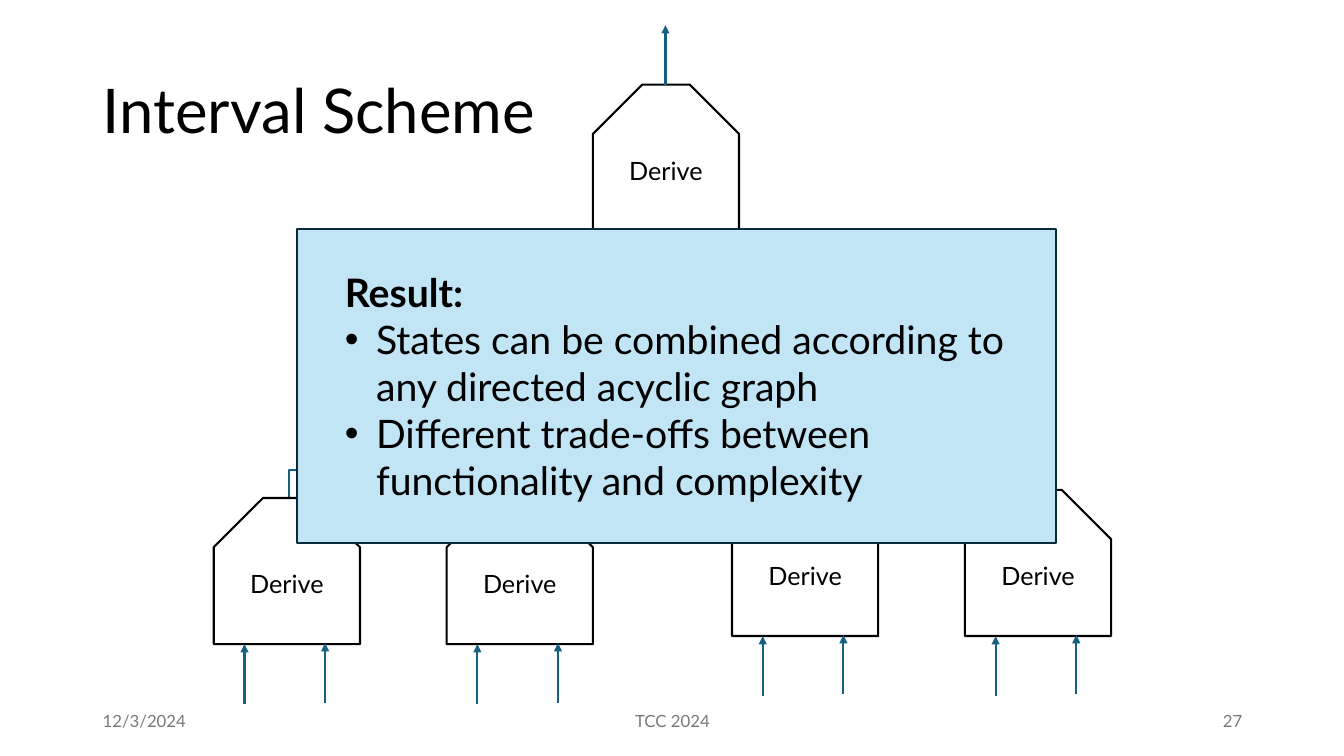
import pptx
import pptx.util
import pptx.dml.color
import pptx.enum.shapes
import pptx.enum.text
import pptx.oxml
import pptx.oxml.ns
import lxml.etree

Inches = pptx.util.Inches
Pt = pptx.util.Pt
qn = pptx.oxml.ns.qn
SHAPES = pptx.enum.shapes.MSO_SHAPE
CONNECTORS = pptx.enum.shapes.MSO_CONNECTOR
ALIGN = pptx.enum.text.PP_ALIGN

COLORS = {"ink": "000000", "paper": "FFFFFF", "arrow": "156082",
          "footer": "797979", "panel": "C1E5F5", "panel_line": "092A39"}


def rgb(name):
    return pptx.dml.color.RGBColor.from_string(COLORS[name])


def write(para, text, size=18, color="ink", bold=False, align=ALIGN.LEFT,
          spacing=None, bullet_indent=None):
    para.alignment = align
    para.line_spacing = spacing
    span = para.add_run()
    span.text = text
    span.font.name = "Lato"
    span.font.size = Pt(size)
    span.font.bold = bold
    span.font.color.rgb = rgb(color)
    if bullet_indent:
        props = para._p.get_or_add_pPr()
        props.set("marL", str(Inches(bullet_indent)))
        props.set("indent", str(-Inches(bullet_indent)))
        lxml.etree.SubElement(props, qn("a:buFont")).set("typeface", "Arial")
        lxml.etree.SubElement(props, qn("a:buChar")).set("char", "•")


class SlideBuilder:
    font_anchor = pptx.enum.text.MSO_ANCHOR.MIDDLE
    line_width = 1.5

    def __init__(self, page):
        self.page = page

    def label(self, left, top, width, height, text, **style):
        box = self.page.shapes.add_textbox(*map(Inches, (left, top, width, height)))
        box.text_frame.word_wrap = True
        box.text_frame.vertical_anchor = self.font_anchor
        write(box.text_frame.paragraphs[0], text, **style)

    def block(self, kind, left, top, width, height, fill, line):
        shape = self.page.shapes.add_shape(kind, *map(Inches, (left, top, width, height)))
        shape.shadow.inherit = False
        shape.fill.solid()
        shape.fill.fore_color.rgb = rgb(fill)
        shape.line.color.rgb = rgb(line)
        shape.line.width = Pt(self.line_width)
        shape.text_frame.word_wrap = True
        shape.text_frame.vertical_anchor = self.font_anchor
        return shape

    def arrow(self, start, end, kind=CONNECTORS.STRAIGHT, rotation=0):
        arrow = self.page.shapes.add_connector(kind, *map(Inches, (*start, *end)))
        arrow.line.color.rgb = rgb("arrow")
        arrow.line.width = Pt(self.line_width)
        props = arrow.element.spPr
        if rotation:
            props.find(qn("a:xfrm")).set("rot", str(rotation * 60000))
        head = lxml.etree.SubElement(props.find(qn("a:ln")), qn("a:tailEnd"))
        head.set("type", "triangle")
        lxml.etree.SubElement(props, qn("a:effectLst"))

    def derive(self, left, top):
        side = 1.45
        node = self.block(SHAPES.SNIP_2_SAME_RECTANGLE, left, top, side, side,
                          "paper", "ink")
        node.adjustments[0] = 0.337
        node.adjustments[1] = 0
        write(node.text_frame.paragraphs[0], "Derive", align=ALIGN.CENTER)

    def panel(self, left, top, width, height, heading, points):
        panel = self.block(SHAPES.RECTANGLE, left, top, width, height,
                           "panel", "panel_line")
        frame = panel.text_frame
        frame.margin_left = frame.margin_right = Inches(0.47)
        frame.margin_top = frame.margin_bottom = Inches(0.43)
        write(frame.paragraphs[0], heading, size=28, bold=True)
        for point in points:
            write(frame.add_paragraph(), point, size=28, bullet_indent=0.31)


def main():
    deck = pptx.Presentation()
    deck.slide_width, deck.slide_height = Inches(13.33), Inches(7.5)
    slide = SlideBuilder(deck.slides.add_slide(deck.slide_layouts[6]))

    # Title
    slide.label(0.92, 0.4, 11.5, 1.45, "Interval Scheme", size=44, spacing=0.9)

    # Elbow arrow, turned so that it leaves the first node upwards
    slide.arrow((3.47, 4.96), (2.86, 4.36), CONNECTORS.ELBOW, rotation=90)

    # Bottom nodes, each with two incoming arrows
    for left, top in ((2.12, 4.94), (4.43, 4.94), (7.26, 4.86), (9.57, 4.86)):
        slide.derive(left, top)
        for offset, tip in ((0.305, 1.45), (1.105, 1.44)):
            x = left + offset
            slide.arrow((x, top + tip + 0.59), (x, top + tip))

    # Top node and its output
    slide.derive(5.88, 0.84)
    slide.arrow((6.6, 0.84), (6.6, 0.25))

    # Footer
    for left, width, text, align in ((0.92, 3, "12/3/2024", ALIGN.LEFT),
                                     (4.42, 4.5, "TCC 2024", ALIGN.CENTER),
                                     (9.42, 3, "27", ALIGN.RIGHT)):
        slide.label(left, 6.95, width, 0.4, text, size=12, color="footer", align=align)

    # Result panel
    slide.panel(2.95, 2.27, 7.52, 3.12, "Result:", (
        "States can be combined according to any directed acyclic graph",
        "Different trade-offs between functionality and complexity"))

    deck.save("out.pptx")


if __name__ == "__main__":
    main()
